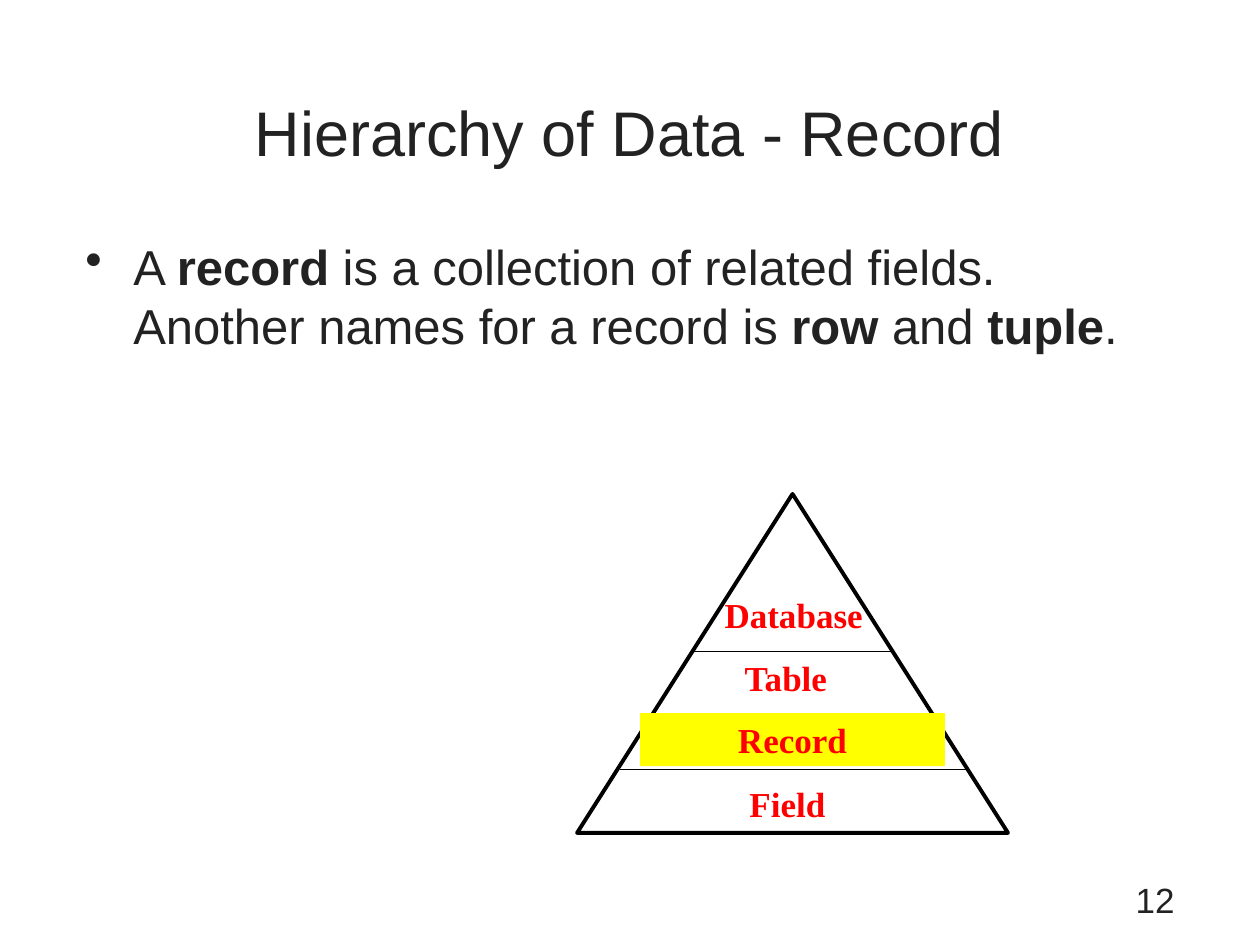
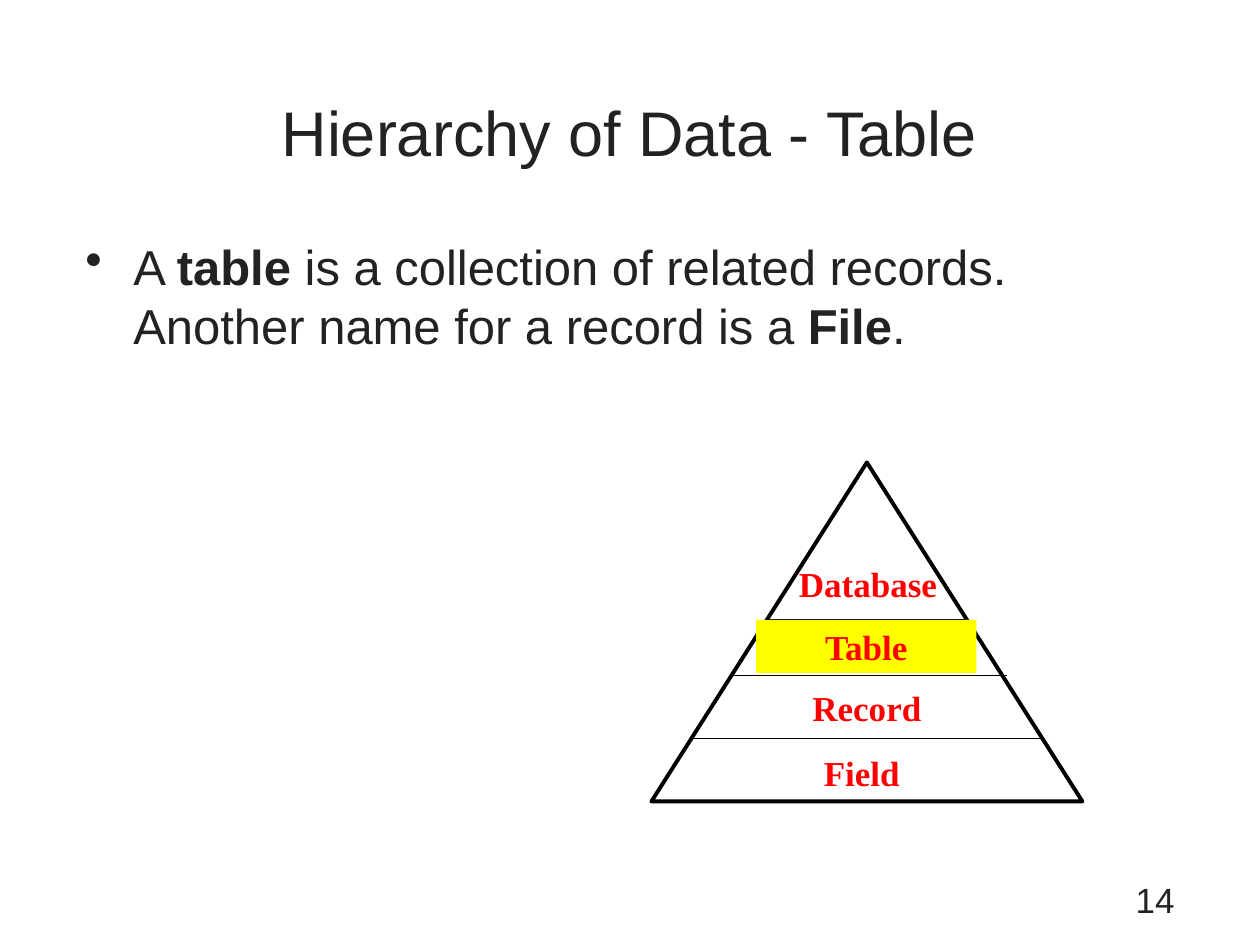
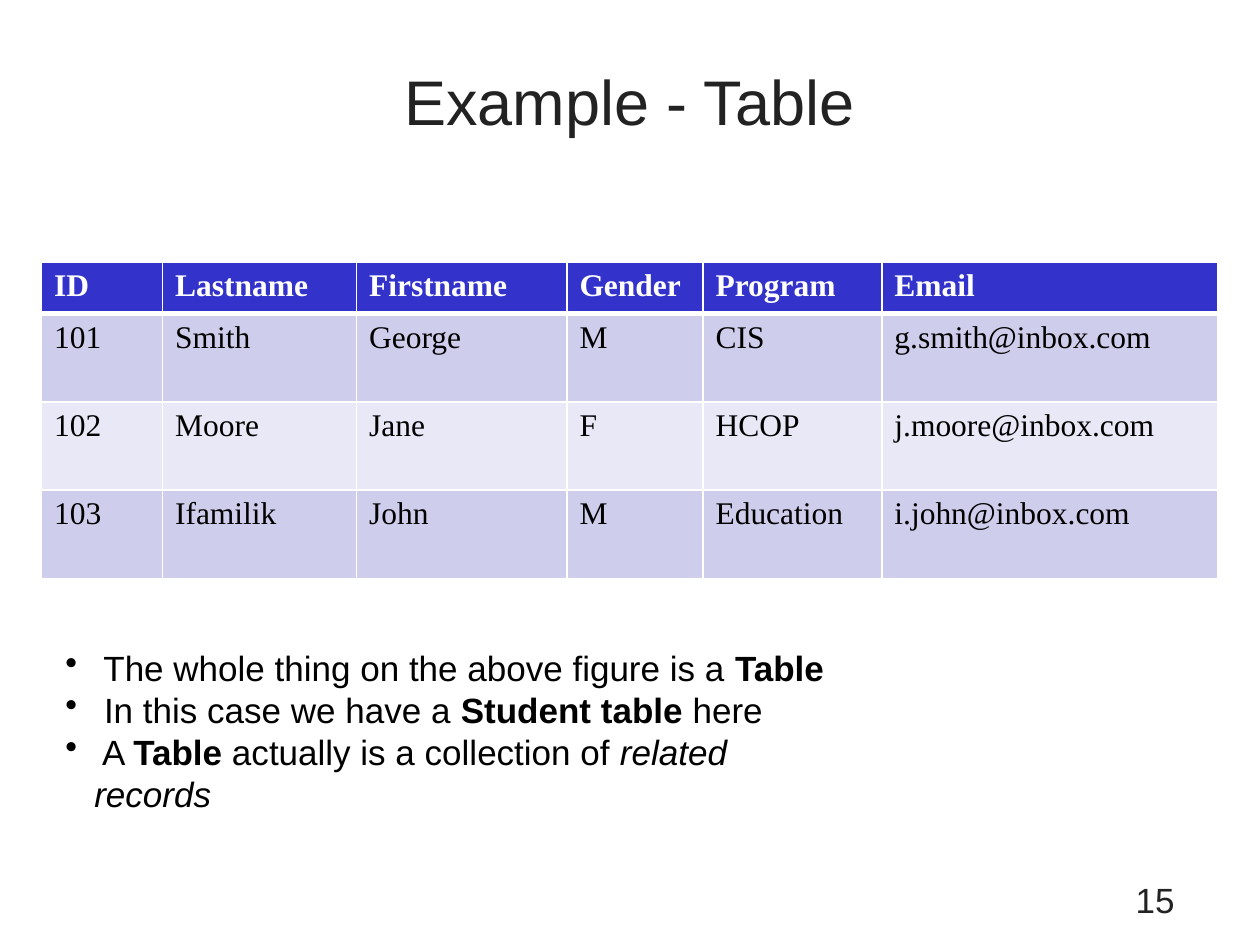
import pptx
import pptx.util
import pptx.dml.color
import pptx.enum.shapes
import pptx.enum.text
import pptx.oxml
import pptx.oxml.ns

SHAPE = pptx.enum.shapes.MSO_SHAPE
ALIGN = pptx.enum.text.PP_ALIGN
ANCHOR = pptx.enum.text.MSO_ANCHOR
SANS, SERIF = "Arial", "Times New Roman"
INK, BLACK, WHITE, RED, YELLOW = "222222", "000000", "FFFFFF", "FF0000", "FFFF00"
HEADER, BANDS = "3333CC", ("CECEEC", "E8E8F6")

# Text is a list of (words, style); style holds "b" for bold and "i" for italic.
PYRAMID_PAGES = [
    {"title": "Hierarchy of Data - Record", "number": "12", "level": "Record",
     "origin": (4.58, 3.92), "middle": (0.59, 1.75),
     "body": [("A ", ""), ("record ", "b"),
              ("is a collection of related fields. Another names for a record is ", ""),
              ("row", "b"), (" and ", ""), ("tuple", "b"), (".", "")]},
    {"title": "Hierarchy of Data - Table", "number": "14", "level": "Table",
     "origin": (5.17, 3.67), "middle": (0.65, 1.69),
     "body": [("A ", ""), ("table ", "b"),
              ("is a collection of related records. Another name for a record is a ", ""),
              ("File", "b"), (".", "")]},
]
# Pyramid parts, in inches from its top left corner.
PYRAMID_SIZE = (3.42, 2.69)
OUTER_DIVIDERS = [(0.34, 2.19, 2.75), (0.92, 1.25, 1.58)]
MIDDLE_LENGTH = 2.17
LEVELS = [("Field", 0.17, 2.25, 3, ALIGN.CENTER),
          ("Record", 0.5, 1.74, 2.42, ALIGN.CENTER),
          ("Table", 1.25, 1.25, 0.93, ALIGN.LEFT),
          ("Database", 1.09, 0.75, 1.49, ALIGN.LEFT)]
HIGHLIGHTS = {"Record": (0.5, 2.42), "Table": (0.83, 1.75)}
LEVEL_HEIGHT = 0.42

STUDENTS = [
    ("ID", "Lastname", "Firstname", "Gender", "Program", "Email"),
    ("101", "Smith", "George", "M", "CIS", "g.smith@inbox.com"),
    ("102", "Moore", "Jane", "F", "HCOP", "j.moore@inbox.com"),
    ("103", "Ifamilik", "John", "M", "Education", "i.john@inbox.com"),
]
COLUMN_WIDTHS = (0.96, 1.54, 1.67, 1.08, 1.42, 2.67)
ROW_HEIGHTS = (0.41, 0.7, 0.7, 0.7)
TABLE_NOTES = [
    [(" The whole thing on the above figure is a ", ""), ("Table", "b")],
    [(" In this case we have a ", ""), ("Student table", "b"), (" here", "")],
    [(" A ", ""), ("Table", "b"), (" actually is a collection of ", ""),
     ("related records", "i")],
]


def inches(*lengths):
    return [pptx.util.Inches(length) for length in lengths]


def color(value):
    return pptx.dml.color.RGBColor.from_string(value)


def write(para, spans, size, font, ink, align=ALIGN.LEFT):
    para.alignment = align
    for words, style in spans:
        span = para.add_run()
        span.text = words
        span.font.size = pptx.util.Pt(size)
        span.font.name = font
        span.font.color.rgb = color(ink)
        span.font.bold = "b" in style
        span.font.italic = "i" in style


def add_bullet(para, indent):
    properties = para._p.get_or_add_pPr()
    properties.set("marL", str(pptx.util.Inches(indent)))
    properties.set("indent", str(-pptx.util.Inches(indent)))
    bullet = properties.makeelement(pptx.oxml.ns.qn("a:buChar"), {"char": "•"})
    properties.append(bullet)


def add_text(page, place, paragraphs, size, ink, align=ALIGN.LEFT, indent=0):
    frame = page.shapes.add_textbox(*inches(*place)).text_frame
    frame.word_wrap = True
    for index, spans in enumerate(paragraphs):
        para = frame.add_paragraph() if index else frame.paragraphs[0]
        write(para, spans, size, SANS, ink, align)
        if indent:
            add_bullet(para, indent)


def add_page(deck, title, number, title_top=0.42):
    page = deck.slides.add_slide(deck.slide_layouts[5])
    box = page.shapes.title
    box.left, box.top, box.width, box.height = inches(0.58, title_top, 8.83, 1.25)
    box.text_frame.vertical_anchor = ANCHOR.MIDDLE
    write(box.text_frame.paragraphs[0], [(title, "")], 36, SANS, INK, ALIGN.CENTER)
    add_text(page, (7.17, 6.92, 2.25, 0.42), [[(number, "")]], 20, INK, ALIGN.RIGHT)
    return page


def add_divider(page, left, top, length):
    line = page.shapes.add_connector(pptx.enum.shapes.MSO_CONNECTOR.STRAIGHT,
                                     *inches(left, top, left + length, top))
    line.line.color.rgb = color(BLACK)
    line.line.width = pptx.util.Pt(0.75)
    effects = line._element.spPr.makeelement(pptx.oxml.ns.qn("a:effectLst"), {})
    line._element.spPr.append(effects)


def add_level(page, place, name, align, highlighted):
    if highlighted:
        box = page.shapes.add_shape(SHAPE.RECTANGLE, *inches(*place))
        box.shadow.inherit = False
        box.fill.solid()
        box.fill.fore_color.rgb = color(YELLOW)
        box.line.fill.background()
    else:
        box = page.shapes.add_textbox(*inches(*place))
    frame = box.text_frame
    frame.word_wrap = True
    frame.vertical_anchor = ANCHOR.TOP
    frame.margin_left = frame.margin_right = pptx.util.Inches(0.08)
    frame.margin_top = frame.margin_bottom = pptx.util.Inches(0.04)
    write(frame.paragraphs[0], [(name, "b")], 20, SERIF, RED, align)


def add_pyramid(page, origin, middle, chosen):
    left, top = origin
    outline = page.shapes.add_shape(SHAPE.FLOWCHART_EXTRACT, *inches(left, top, *PYRAMID_SIZE))
    outline.shadow.inherit = False
    outline.fill.background()
    outline.line.color.rgb = color(BLACK)
    outline.line.width = pptx.util.Pt(2.25)
    for x, y, length in OUTER_DIVIDERS + [(*middle, MIDDLE_LENGTH)]:
        add_divider(page, left + x, top + y, length)
    for name, x, y, width, align in LEVELS:
        if name == chosen:
            x, width = HIGHLIGHTS[name]
            align = ALIGN.CENTER
        add_level(page, (left + x, top + y, width, LEVEL_HEIGHT), name, align, name == chosen)


def add_borders(cell, bottom, top):
    """Draw white cell borders; the rule under the header is thicker."""
    properties = cell._tc.get_or_add_tcPr()
    widths = {"lnL": 1, "lnR": 1, "lnT": top, "lnB": bottom}
    for index, (side, width) in enumerate(widths.items()):
        border = pptx.oxml.parse_xml(
            f'<a:{side} {pptx.oxml.ns.nsdecls("a")} w="{pptx.util.Pt(width)}"><a:solidFill>'
            f'<a:srgbClr val="{WHITE}"/></a:solidFill></a:{side}>')
        properties.insert(index, border)


def add_student_table(page):
    grid = page.shapes.add_table(len(STUDENTS), len(COLUMN_WIDTHS),
                                 *inches(0.33, 2.08, sum(COLUMN_WIDTHS), sum(ROW_HEIGHTS))).table
    for column, width in zip(grid.columns, COLUMN_WIDTHS):
        column.width = pptx.util.Inches(width)
    for r, (record, height) in enumerate(zip(STUDENTS, ROW_HEIGHTS)):
        grid.rows[r].height = pptx.util.Inches(height)
        fill, ink, style = (BANDS[(r - 1) % 2], BLACK, "") if r else (HEADER, WHITE, "b")
        for c, value in enumerate(record):
            cell = grid.cell(r, c)
            cell.fill.solid()
            cell.fill.fore_color.rgb = color(fill)
            write(cell.text_frame.paragraphs[0], [(value, style)], 18, SERIF, ink)
            add_borders(cell, bottom=1 if r else 3, top=3 if r == 1 else 1)


def main():
    deck = pptx.Presentation()
    deck.slide_width, deck.slide_height = inches(10, 7.5)
    for content in PYRAMID_PAGES:
        page = add_page(deck, content["title"], content["number"])
        add_text(page, (0.58, 1.83, 8.83, 5), [content["body"]], 28, INK, indent=0.38)
        add_pyramid(page, content["origin"], content["middle"], content["level"])
    page = add_page(deck, "Example - Table", "15", title_top=0.17)
    add_student_table(page)
    add_text(page, (0.42, 5.08, 6.39, 1.11), TABLE_NOTES, 20, BLACK, indent=0.23)
    deck.save("out.pptx")


if __name__ == "__main__":
    main()
